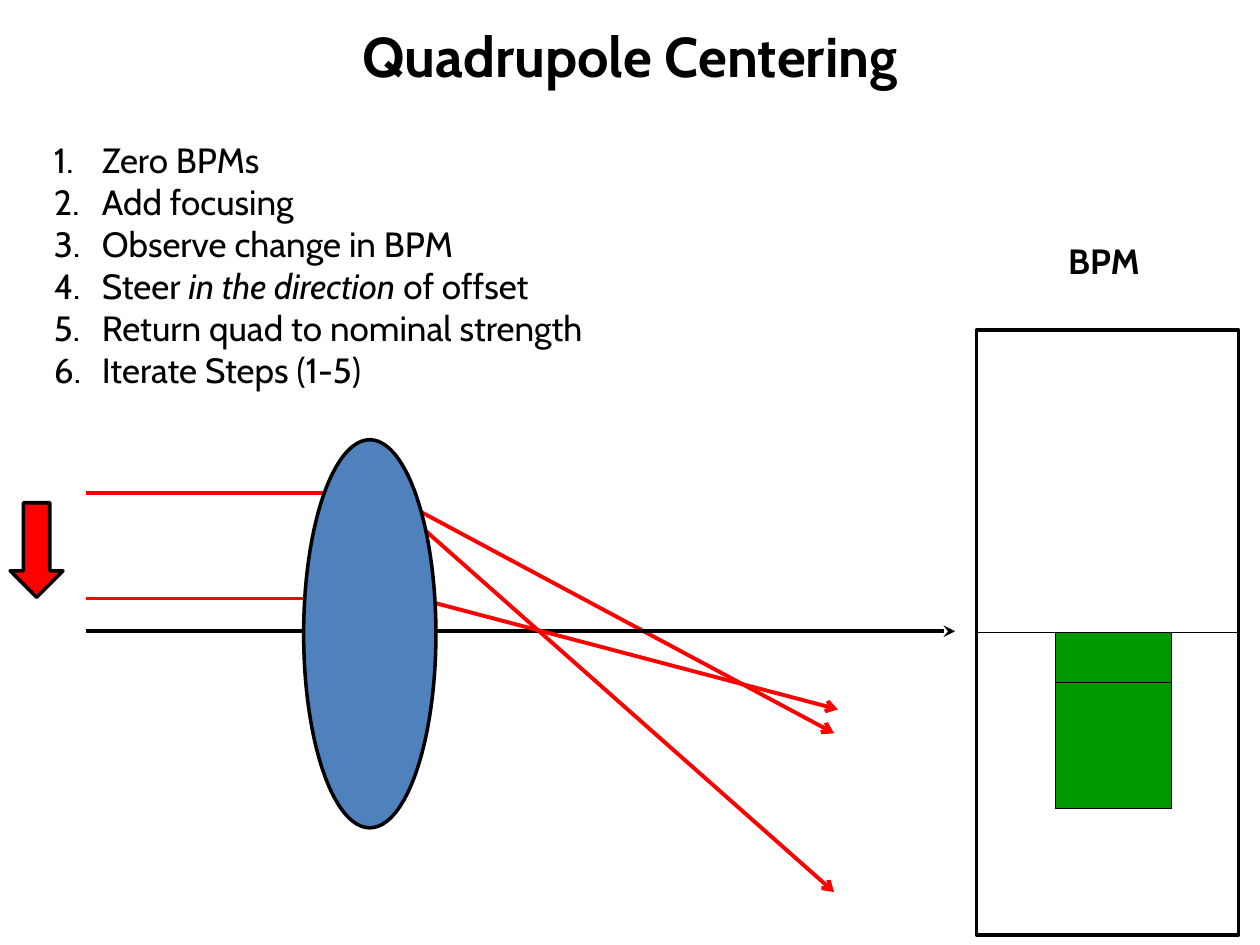
import pptx
import pptx.util
import pptx.dml.color
import pptx.enum.shapes
import pptx.enum.text
import pptx.oxml.ns
import lxml.etree

RGBColor = pptx.dml.color.RGBColor
Shape = pptx.enum.shapes.MSO_SHAPE
Align = pptx.enum.text.PP_ALIGN
Anchor = pptx.enum.text.MSO_ANCHOR
qn = pptx.oxml.ns.qn

BLACK = RGBColor(0x00, 0x00, 0x00)
RED = RGBColor(0xFF, 0x00, 0x00)
BLUE = RGBColor(0x4F, 0x81, 0xBD)
GREEN = RGBColor(0x00, 0x99, 0x00)

COLUMNS, ROWS = 100, 75
AXIS = 50.1


class Painter:
    font = "Cabin"
    size = 20

    def __init__(self, deck):
        self.page = deck.slides.add_slide(deck.slide_layouts[6])
        self.column = deck.slide_width / COLUMNS
        self.row = deck.slide_height / ROWS

    def place(self, *values):
        units = (self.column, self.row) * 2
        return [pptx.util.Emu(round(value * unit)) for value, unit in zip(values, units)]

    def shape(self, kind, at, fill=None, width=2):
        shape = self.page.shapes.add_shape(kind, *self.place(*at))
        shape.shadow.inherit = False
        if fill is None:
            shape.fill.background()
        else:
            shape.fill.solid()
            shape.fill.fore_color.rgb = fill
        shape.line.color.rgb = BLACK
        shape.line.width = pptx.util.Pt(width)
        return shape

    def line(self, start, end, color=RED, width=2.25, arrow=None):
        line = self.page.shapes.add_connector(
            pptx.enum.shapes.MSO_CONNECTOR.STRAIGHT, *self.place(*start, *end))
        line.line.color.rgb = color
        line.line.width = pptx.util.Pt(width)
        if arrow:
            stroke = line.line._get_or_add_ln()
            lxml.etree.SubElement(stroke, qn("a:tailEnd"), type=arrow)
        lxml.etree.SubElement(line._element.spPr, qn("a:effectLst"))
        return line

    def text(self, at, paragraphs, size=None, bold=False, align=Align.LEFT,
             anchor=Anchor.TOP, wrap=False, numbered=False):
        box = self.page.shapes.add_textbox(*self.place(*at))
        frame = box.text_frame
        frame.word_wrap = wrap
        frame.vertical_anchor = anchor
        for index, spans in enumerate(paragraphs):
            para = frame.add_paragraph() if index else frame.paragraphs[0]
            para.alignment = align
            if numbered:
                self.number(para)
            para.font.size = pptx.util.Pt(size or self.size)
            for words, italic in spans:
                span = para.add_run()
                span.text = words
                span.font.name = self.font
                span.font.size = pptx.util.Pt(size or self.size)
                span.font.bold = bold
                span.font.italic = italic
                span.font.color.rgb = BLACK

    def number(self, para):
        properties = para._p.get_or_add_pPr()
        indent = pptx.util.Inches(0.38)
        properties.set("marL", str(indent))
        properties.set("indent", str(-indent))
        lxml.etree.SubElement(properties, qn("a:buFont"), typeface="+mj-lt")
        lxml.etree.SubElement(properties, qn("a:buAutoNum"), type="arabicPeriod")


def main():
    deck = pptx.Presentation()
    deck.slide_width = pptx.util.Inches(10)
    deck.slide_height = pptx.util.Inches(7.5)
    painter = Painter(deck)

    painter.line((29.8, 38.7), (66.2, 58.2), arrow="arrow")
    painter.line((6.8, AXIS), (75.8, AXIS), BLACK, arrow="stealth")
    painter.line((27.1, 45.9), (66.5, 56.3), arrow="arrow")
    painter.line((29.9, 38.7), (66.2, 70.8), arrow="arrow")
    for beam in (39.1, 47.5):
        painter.line((6.8, beam), (30.2, beam))
    painter.shape(Shape.OVAL, (24.1, 34.9, 10.5, 30.8), BLUE)

    painter.text((5, 0, 90, 8.8), [[("Quadrupole Centering", False)]], size=32,
                 bold=True, align=Align.CENTER, anchor=Anchor.MIDDLE, wrap=True)
    steps = [
        [("Zero BPMs", False)],
        [("Add focusing", False)],
        [("Observe change in BPM", False)],
        [("Steer ", False), ("in the direction ", True), ("of offset", False)],
        [("Return quad to nominal strength", False)],
        [("Iterate Steps (1-5)", False)],
    ]
    painter.text((3.3, 10.5, 46.2, 21.2), steps, numbered=True)

    monitor = painter.shape(Shape.RECTANGLE, (77.5, 26.2, 20.8, 48))
    zero = painter.line((77.5, AXIS), (98.3, AXIS), BLACK, 0.75)
    zero.begin_connect(monitor, 1)
    zero.end_connect(monitor, 3)
    painter.text((83.8, 18.5, 8.3, 4.4), [[("BPM", False)]], bold=True)
    for reading in (14, 4):
        painter.shape(Shape.RECTANGLE, (83.8, 50.2, 9.2, reading), GREEN, 0.5)
    painter.shape(Shape.DOWN_ARROW, (0.8, 39.9, 4.2, 7.5), RED)

    deck.save("out.pptx")


if __name__ == "__main__":
    main()
